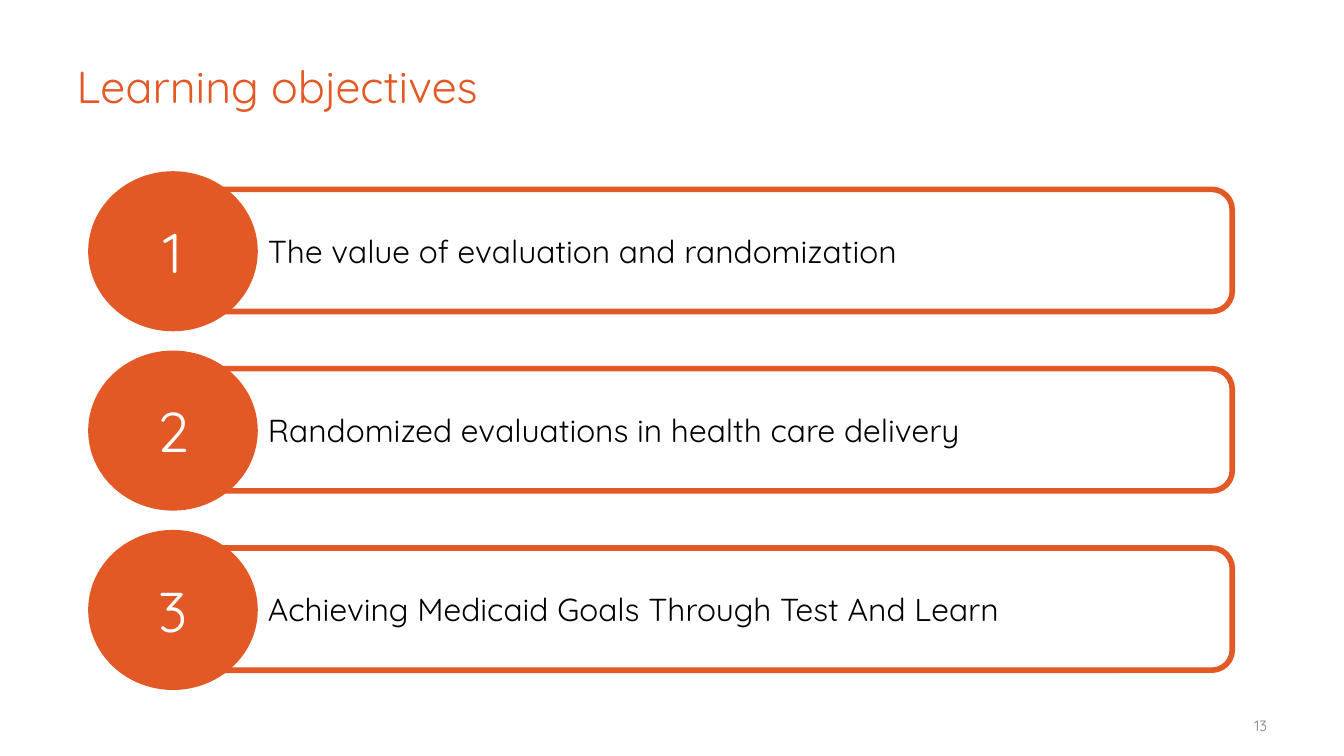
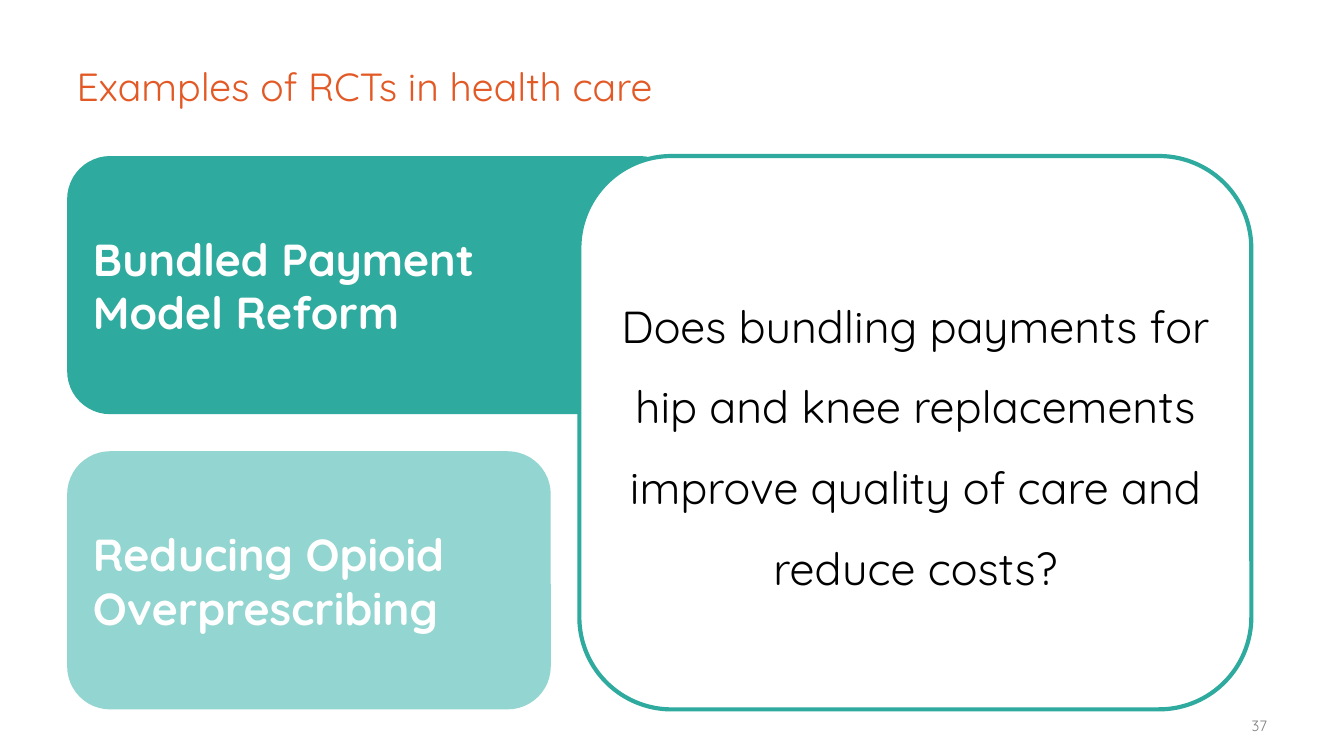
from pptx import Presentation
from pptx.dml.color import RGBColor as Rgb
from pptx.enum.shapes import MSO_SHAPE as Kind
from pptx.enum.text import MSO_ANCHOR as Anchor, PP_ALIGN as Align
from pptx.util import Cm, Pt

FONT = "Quicksand"
HUES = {
    "orange": "E35925",
    "teal": "2FAA9F",
    "mint": "93D5D0",
    "white": "FFFFFF",
    "black": "000000",
    "grey": "7F7F7F",
}


def hue(name):
    return Rgb.from_string(HUES[name])


def write(shape, text, size=24, color="black", bold=False, align=Align.LEFT,
          anchor=Anchor.MIDDLE, pad=(0.25, 0.25), left=None, lead=None, above=None):
    frame = shape.text_frame
    frame.word_wrap = True
    frame.vertical_anchor = anchor
    side, edge = pad
    frame.margin_left = Cm(side if left is None else left)
    frame.margin_right = Cm(side)
    frame.margin_top = frame.margin_bottom = Cm(edge)
    for i, line in enumerate(text.split("\n")):
        para = frame.add_paragraph() if i else frame.paragraphs[0]
        para.alignment = align
        if lead:
            para.line_spacing = lead
        if above:
            para.space_before = Pt(above)
        run = para.add_run()
        run.text = line
        font = run.font
        font.name, font.size, font.bold = FONT, Pt(size), bold
        font.color.rgb = hue(color)


class Deck:
    def __init__(self):
        self.file = Presentation()
        self.file.slide_width = Cm(25.4)
        self.file.slide_height = Cm(14.29)
        self.slide = None

    def page(self, title, number, size=24):
        self.slide = self.file.slides.add_slide(self.file.slide_layouts[6])
        self.label((1.27, 0.41, 22.86, 2.41), title, size=size, color="orange")
        self.label((21.77, 13.44, 2.36, 0.46), str(number), size=8, color="grey",
                   align=Align.RIGHT, anchor=Anchor.TOP)

    def label(self, box, text, **style):
        shape = self.slide.shapes.add_textbox(*map(Cm, box))
        write(shape, text, pad=(0.18, 0.1), **style)

    def shape(self, kind, box, text, fill="white", line=None, width=0.75, **style):
        shape = self.slide.shapes.add_shape(kind, *map(Cm, box))
        shape.shadow.inherit = False
        shape.fill.solid()
        shape.fill.fore_color.rgb = hue(fill)
        if line:
            shape.line.color.rgb = hue(line)
            shape.line.width = Pt(width)
        else:
            shape.line.fill.background()
        write(shape, text, **style)

    def card(self, box, text, **style):
        self.shape(Kind.ROUNDED_RECTANGLE, box, text, **style)

    def disc(self, box, text, **style):
        self.shape(Kind.OVAL, box, text, align=Align.CENTER, **style)


def goals(deck):
    deck.page("Learning objectives", 13)
    items = [
        "The value of evaluation and randomization",
        "Randomized evaluations in health care delivery",
        "Achieving Medicaid Goals Through Test And Learn",
    ]
    for i, item in enumerate(items):
        top = 3.25 + 3.39 * i
        deck.card((3.73, top + 0.33, 19.56, 2.31), item, line="orange", width=3,
                  size=17, left=1.22)
        deck.disc((1.68, top, 3.18, 3), str(i + 1), fill="orange", line="orange",
                  size=30, color="white")


def trials(deck):
    deck.page("Examples of RCTs in health care", 37, size=21)
    left, top, high, gap = 1.27, 2.95, 4.88, 0.7
    cards = [
        ("Bundled Payment\nModel Reform", 11.63, "teal"),
        ("Reducing Opioid Overprescribing", 9.14, "mint"),
    ]
    for i, (text, wide, fill) in enumerate(cards):
        deck.card((left, top + i * (high + gap), wide, high), text, fill=fill,
                  color="white", bold=True)
    deck.card((10.95, top, 12.7, 2 * high + gap),
              "Does bundling payments for hip and knee replacements "
              "improve quality of care and reduce costs?",
              line="teal", width=2.25, align=Align.CENTER, lead=1.5, above=7)


def main():
    deck = Deck()
    goals(deck)
    trials(deck)
    deck.file.save("out.pptx")


if __name__ == "__main__":
    main()
